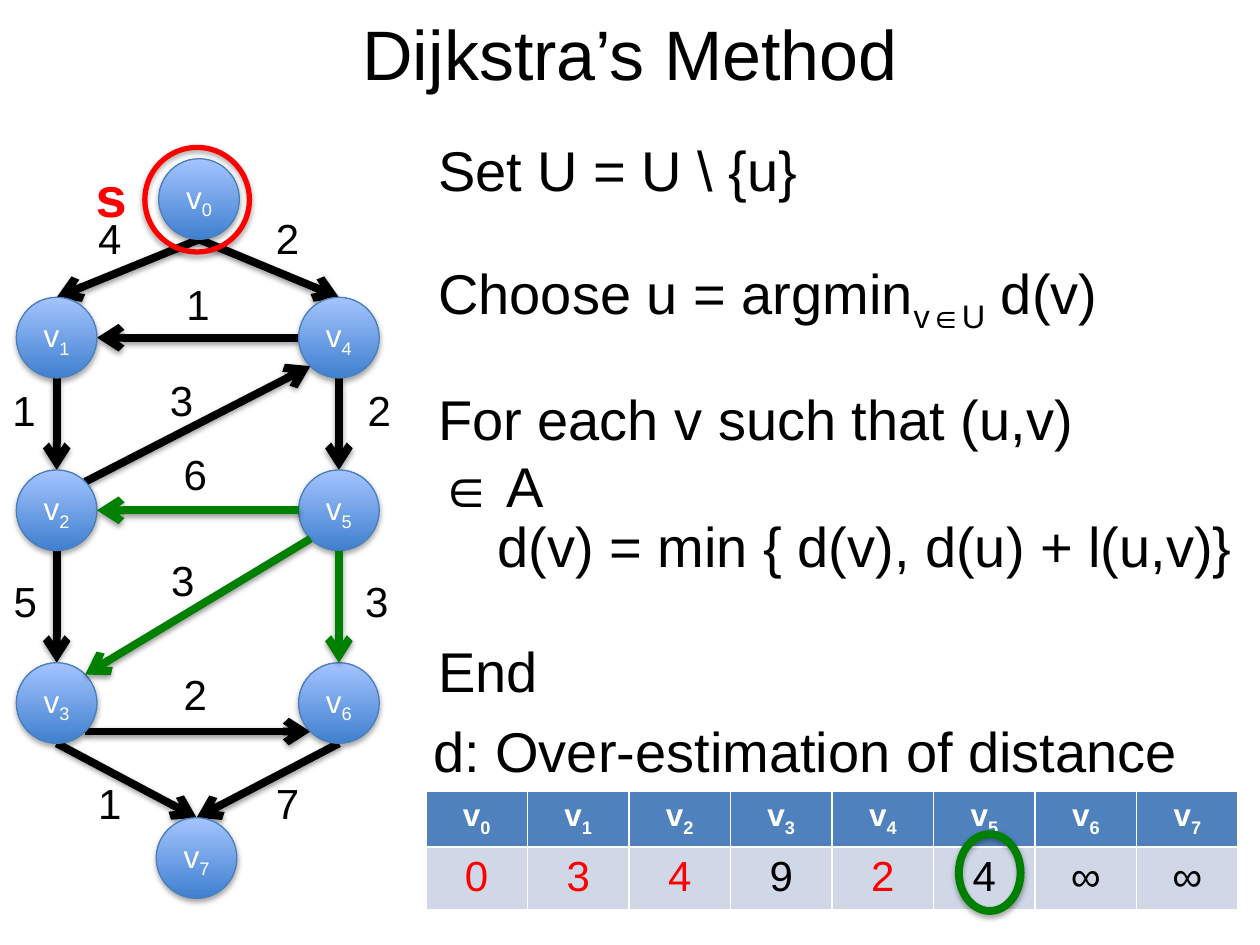
from lxml import etree
from pptx import Presentation
from pptx import util as u
from pptx.dml import color
from pptx.enum import shapes, text
from pptx.oxml import ns

BLACK, WHITE, RED, GREEN = "000000", "FFFFFF", "FF0000", "008000"
NODE_SIZE = 0.64
DIAGONAL = 0.5 ** 0.5
SIDES = {
    "top": (0, -1), "bottom": (0, 1), "left": (-1, 0), "right": (1, 0),
    "top right": (DIAGONAL, -DIAGONAL),
    "bottom left": (-DIAGONAL, DIAGONAL), "bottom right": (DIAGONAL, DIAGONAL),
}
# Node centres, relative to the graph's corner.
LEFT_X, RIGHT_X = 0.45, 2.69
CENTRES = [
    (1.58, 0.58), (LEFT_X, 1.68), (LEFT_X, 3.05), (LEFT_X, 4.58),
    (RIGHT_X, 1.68), (RIGHT_X, 3.05), (RIGHT_X, 4.58), (1.56, 5.81),
]
# Start node, its side, end node, its side.
EDGES = [
    (2, "top right", 4, "bottom left"),
    (0, "bottom", 1, "top"),
    (0, "bottom", 4, "top"),
    (1, "bottom", 2, "top"),
    (4, "bottom", 5, "top"),
    (4, "left", 1, "right"),
    (2, "bottom", 3, "top"),
    (3, "bottom", 7, "top"),
    (6, "bottom", 7, "top"),
    (3, "bottom right", 6, "bottom left"),
]
RELAXED_EDGES = [
    (5, "bottom", 6, "top"),
    (5, "bottom left", 3, "top right"),
    (5, "left", 2, "right"),
]
# Length and the corner of its label, relative to the graph's corner.
LENGTHS = [
    ("4", 0.68, 0.64), ("2", 2.09, 0.64), ("1", 1.38, 1.16),
    ("1", 0, 2), ("2", 2.82, 2), ("5", 0.01, 3.52), ("3", 2.8, 3.52),
    ("3", 1.25, 1.92), ("6", 1.36, 2.51), ("3", 1.26, 3.35),
    ("2", 1.36, 4.26), ("1", 0.68, 5.12), ("7", 2.09, 5.12),
]
# Text parts (every second one is a subscript), indent, top, width, wrap.
STEPS = [
    (["Set U = U \\ {u}"], 0, 0, 3.08, False),
    (["Choose u = argmin", "v∈U", " d(v)"], 0, 0.97, 5.53, False),
    (["For each v such that (u,v) ∈ A"], 0, 1.97, 5.8, True),
    (["d(v) = min { d(v), d(u) + l(u,v)}"], 0.47, 2.98, 6.09, False),
    (["End"], 0, 3.97, 1, False),
]
DISTANCES = ["0", "3", "4", "9", "2", "4", "∞", "∞"]
VISITED = {0, 1, 2, 4}


def rgb(value):
    return color.RGBColor.from_string(value)


def write(frame, parts, size, ink, bold=False, align=text.PP_ALIGN.LEFT):
    """Fill the frame with one line; every second part is a subscript."""
    para = frame.paragraphs[0]
    para.alignment = align
    for index, part in enumerate(parts):
        span = para.add_run()
        span.text = part
        span.font.size = u.Pt(size)
        span.font.name = "Arial"
        span.font.bold = bold
        span.font.color.rgb = rgb(ink)
        if index % 2:
            span.font._element.set("baseline", "-25000")


def add_text(page, left, top, width, height, parts, size, ink=BLACK,
             bold=False, wrap=False, align=text.PP_ALIGN.LEFT):
    box = page.shapes.add_textbox(*map(u.Inches, (left, top, width, height)))
    box.text_frame.word_wrap = wrap
    write(box.text_frame, parts, size, ink, bold, align)
    return box


def cast_shadow(shape, distance, opacity):
    effects = etree.SubElement(shape._element.spPr, ns.qn("a:effectLst"))
    shadow = etree.SubElement(effects, ns.qn("a:outerShdw"), blurRad="40000",
                              dist=str(distance), dir="5400000", rotWithShape="0")
    tint = etree.SubElement(shadow, ns.qn("a:srgbClr"), val=BLACK)
    etree.SubElement(tint, ns.qn("a:alpha"), val=str(opacity * 1000))


def add_oval(page, left, top, width, height, line, weight):
    oval = page.shapes.add_shape(shapes.MSO_SHAPE.OVAL,
                                 *map(u.Inches, (left, top, width, height)))
    oval.fill.background()
    oval.line.color.rgb = rgb(line)
    oval.line.width = u.Pt(weight)
    cast_shadow(oval, 23000, 35)
    return oval


def add_node(page, x, y, number):
    half = NODE_SIZE / 2
    node = add_oval(page, x - half, y - half, NODE_SIZE, NODE_SIZE, "4B7EBC", 0.75)
    node.fill.gradient()
    node.fill.gradient_angle = 90
    for stop, position, tint in zip(node.fill.gradient_stops, (0, 1),
                                    ("3F80CE", "A4C4FF")):
        stop.position = position
        stop.color.rgb = rgb(tint)
    node.text_frame.word_wrap = False
    node.text_frame.vertical_anchor = text.MSO_ANCHOR.MIDDLE
    write(node.text_frame, ["v", str(number)], 18, WHITE,
          align=text.PP_ALIGN.CENTER)


def add_edges(page, left, top, edges, ink):
    def point(node, side):
        (x, y), (across, down) = CENTRES[node], SIDES[side]
        return (u.Inches(left + x + across * NODE_SIZE / 2),
                u.Inches(top + y + down * NODE_SIZE / 2))

    for start, start_side, end, end_side in edges:
        edge = page.shapes.add_connector(shapes.MSO_CONNECTOR.STRAIGHT,
                                         *point(start, start_side),
                                         *point(end, end_side))
        edge.line.color.rgb = rgb(ink)
        edge.line.width = u.Pt(4.5)
        etree.SubElement(edge.line._get_or_add_ln(), ns.qn("a:tailEnd"), type="arrow")
        cast_shadow(edge, 20000, 38)


def add_graph(page, left, top):
    add_edges(page, left, top, EDGES, BLACK)
    for number, (x, y) in enumerate(CENTRES):
        add_node(page, left + x, top + y, number)
    for length, x, y in LENGTHS:
        add_text(page, left + x, top + y, 0.39, 0.5, [length], 24)
    add_oval(page, left + 1.15, top + 0.17, 0.83, 0.83, RED, 3)
    add_text(page, left + 0.66, top + 0.23, 0.45, 0.64, ["s"], 32, RED, bold=True)
    add_edges(page, left, top, RELAXED_EDGES, GREEN)


def add_steps(page, left, top):
    for parts, indent, drop, width, wrap in STEPS:
        add_text(page, left + indent, top + drop, width, 0.64, parts, 32, wrap=wrap)


def add_distances(page, left, top, width, height):
    """Caption, table of distances and the ring round the current one."""
    add_text(page, left - 0.04, top - 0.64, 6.16, 0.64,
             ["d: Over-estimation of distance"], 32)
    table = page.shapes.add_table(2, len(DISTANCES),
                                  *map(u.Inches, (left, top, width, height))).table
    for column, distance in enumerate(DISTANCES):
        ink = RED if column in VISITED else BLACK
        rows = [(["v", str(column)], 18, WHITE, True, "4F81BD"),
                ([distance], 24, ink, False, "D0D8E8")]
        for row, (parts, size, tint, bold, fill) in enumerate(rows):
            cell = table.cell(row, column)
            cell.fill.solid()
            cell.fill.fore_color.rgb = rgb(fill)
            write(cell.text_frame, parts, size, tint, bold, text.PP_ALIGN.CENTER)
    add_oval(page, left + 4.23, top + 0.34, 0.49, 0.61, GREEN, 4.5)


def main():
    deck = Presentation()
    deck.slide_width, deck.slide_height = u.Inches(10), u.Inches(7.5)
    page = deck.slides.add_slide(deck.slide_layouts[6])
    title = add_text(page, 0.5, 0.06, 9, 0.71, ["Dijkstra’s Method"], 40,
                     wrap=True, align=text.PP_ALIGN.CENTER)
    title.text_frame.vertical_anchor = text.MSO_ANCHOR.MIDDLE
    add_graph(page, 0, 1)
    add_steps(page, 3.38, 1.03)
    add_distances(page, 3.38, 6.28, 6.45, 0.82)
    deck.save("out.pptx")


if __name__ == "__main__":
    main()
